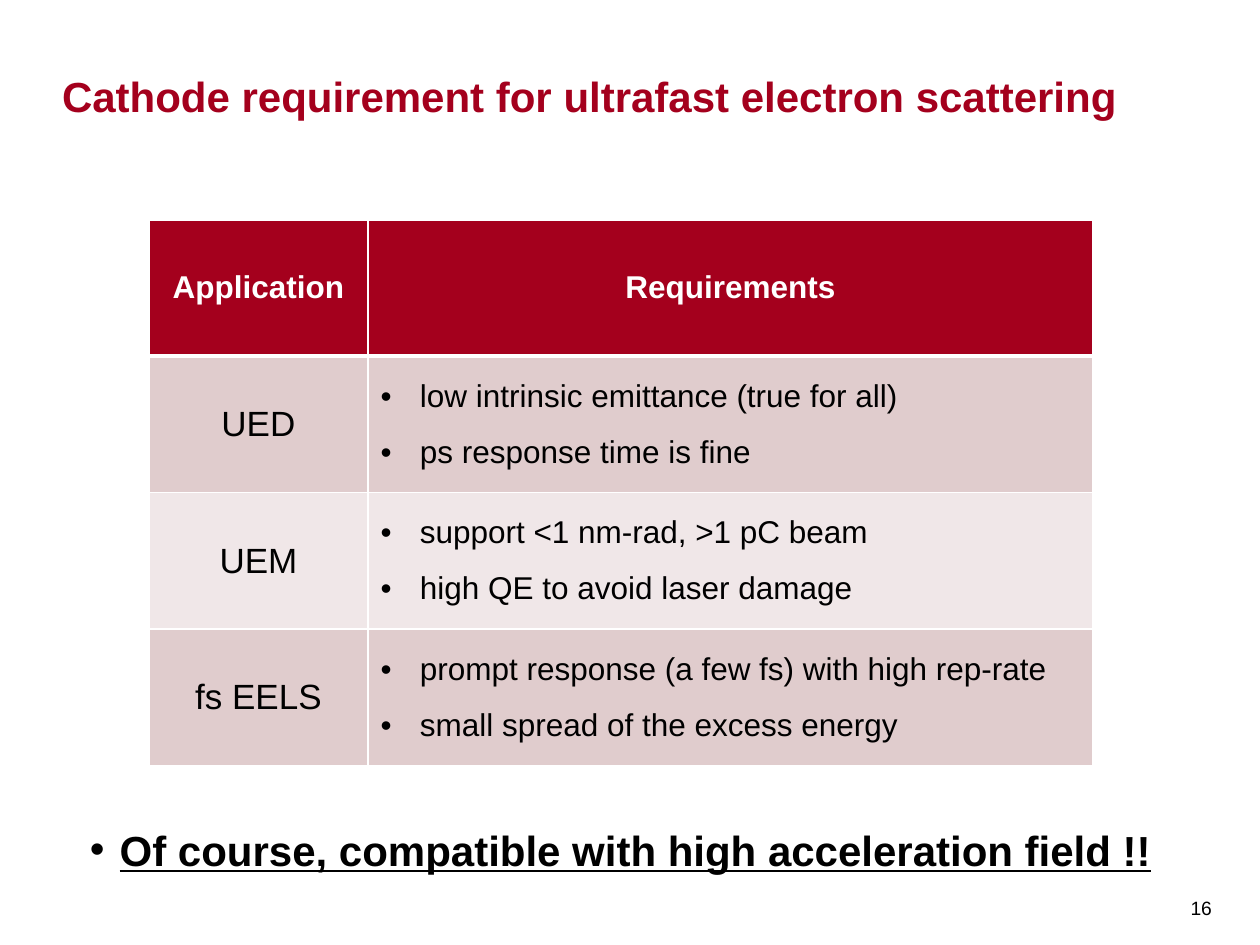
from lxml.etree import SubElement
from pptx import Presentation
from pptx.dml.color import RGBColor
from pptx.enum.text import MSO_ANCHOR as Anchor, MSO_AUTO_SIZE as AutoSize, PP_ALIGN as Align
from pptx.oxml.ns import qn
from pptx.util import Cm, Pt

CRIMSON = RGBColor(0xA4, 0x00, 0x1D)
ROSE = RGBColor(0xE0, 0xCC, 0xCD)
PALE_ROSE = RGBColor(0xF0, 0xE7, 0xE8)
WHITE = RGBColor(0xFF, 0xFF, 0xFF)
BLACK = RGBColor(0x00, 0x00, 0x00)

TITLE = "Cathode requirement for ultrafast electron scattering"
CONCLUSION = "Of course, compatible with high acceleration field !!"
HEADINGS = ("Application", "Requirements")
REQUIREMENTS = {
    "UED": ("low intrinsic emittance (true for all)", "ps response time is fine"),
    "UEM": ("support <1 nm-rad, >1 pC beam", "high QE to avoid laser damage"),
    "fs EELS": ("prompt response (a few fs) with high rep-rate",
                "small spread of the excess energy"),
}


def set_attributes(target, values):
    for name, value in values.items():
        setattr(target, name, value)


def place(element, left, top, width, height):
    set_attributes(element, {"left": Cm(left), "top": Cm(top),
                             "width": Cm(width), "height": Cm(height)})


def write(paragraph, text, size, color=BLACK, bold=False, underline=False):
    run = paragraph.add_run()
    run.text = text
    set_attributes(run.font, {"name": "Arial", "size": Pt(size),
                              "bold": bold, "underline": underline})
    run.font.color.rgb = color


def add_bullet(paragraph, indent):
    properties = paragraph._p.get_or_add_pPr()
    properties.set("marL", str(Cm(indent)))
    properties.set("indent", str(-Cm(indent)))
    SubElement(properties, qn("a:buFont"), typeface="Arial")
    SubElement(properties, qn("a:buChar"), char="•")


def add_title(slide):
    title = slide.shapes.title
    place(title, 1.25, 0.35, 22.5, 2.09)
    frame = title.text_frame
    set_attributes(frame, {"margin_left": 0, "margin_right": 0, "margin_top": 0,
                           "margin_bottom": 0, "vertical_anchor": Anchor.BOTTOM,
                           "auto_size": AutoSize.NONE, "word_wrap": True})
    heading = frame.paragraphs[0]
    heading.alignment = Align.LEFT
    write(heading, TITLE, 24, CRIMSON, bold=True)


def add_conclusion(slide):
    body = slide.placeholders[1]
    place(body, 1.07, 15.98, 22.88, 1.8)
    set_attributes(body.text_frame, {"auto_size": AutoSize.SHAPE_TO_FIT_TEXT,
                                     "word_wrap": True})
    conclusion = body.text_frame.paragraphs[0]
    add_bullet(conclusion, 0.6)
    set_attributes(conclusion, {"alignment": Align.CENTER, "line_spacing": 1.5,
                                "space_before": Pt(0)})
    write(conclusion, CONCLUSION, 24, bold=True, underline=True)


def format_cell(cell, fill, top=1, bottom=1):
    cell.vertical_anchor = Anchor.MIDDLE
    properties = cell._tc.get_or_add_tcPr()
    for side, weight in (("L", 1), ("R", 1), ("T", top), ("B", bottom)):
        border = SubElement(properties, qn(f"a:ln{side}"), w=str(Pt(weight)))
        solid = SubElement(border, qn("a:solidFill"))
        SubElement(solid, qn("a:srgbClr"), val=str(WHITE))
    cell.fill.solid()
    cell.fill.fore_color.rgb = fill


def write_centred(cell, text, size, color=BLACK, bold=False):
    paragraph = cell.text_frame.paragraphs[0]
    paragraph.alignment = Align.CENTER
    write(paragraph, text, size, color, bold)


def write_list(cell, items):
    frame = cell.text_frame
    for index, item in enumerate(items):
        paragraph = frame.add_paragraph() if index else frame.paragraphs[0]
        add_bullet(paragraph, 0.79)
        if index:
            paragraph.space_before = Pt(12)
        write(paragraph, item, 18)


def add_requirements(slide):
    row_count = len(REQUIREMENTS) + 1
    table = slide.shapes.add_table(row_count, len(HEADINGS), Cm(3), Cm(4.43),
                                   Cm(19.03), Cm(2.75 * row_count)).table
    for column, width in zip(table.columns, (4.42, 14.61)):
        column.width = Cm(width)
    for column, heading in enumerate(HEADINGS):
        cell = table.cell(0, column)
        format_cell(cell, CRIMSON, bottom=3)
        write_centred(cell, heading, 18, WHITE, bold=True)
    for row, (application, items) in enumerate(REQUIREMENTS.items(), start=1):
        for column in range(len(HEADINGS)):
            format_cell(table.cell(row, column), ROSE if row % 2 else PALE_ROSE,
                        top=3 if row == 1 else 1)
        write_centred(table.cell(row, 0), application, 20)
        write_list(table.cell(row, 1), items)


def add_page_number(slide):
    frame = slide.shapes.add_textbox(Cm(23.8), Cm(17.55), Cm(0.9), Cm(1.5)).text_frame
    set_attributes(frame, {"margin_left": Cm(0.2), "margin_right": Cm(0.2),
                           "margin_top": Cm(0.15), "margin_bottom": Cm(0.13),
                           "vertical_anchor": Anchor.MIDDLE, "word_wrap": True})
    write(frame.paragraphs[0], "16", 11)


def main():
    deck = Presentation()
    set_attributes(deck, {"slide_width": Cm(25.4), "slide_height": Cm(19.05)})
    slide = deck.slides.add_slide(deck.slide_layouts[1])
    add_page_number(slide)
    add_title(slide)
    add_conclusion(slide)
    add_requirements(slide)
    deck.save("out.pptx")


if __name__ == "__main__":
    main()
